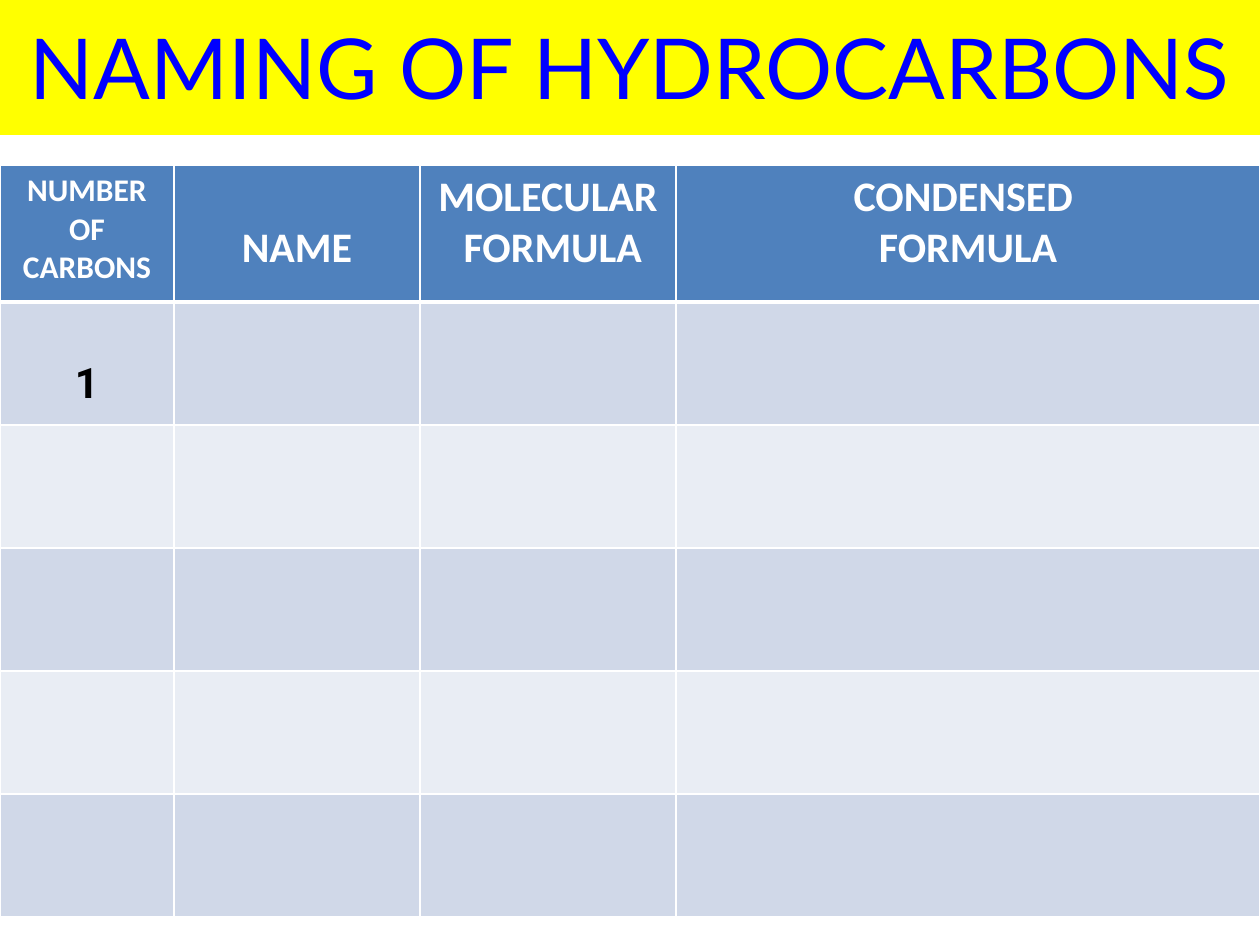
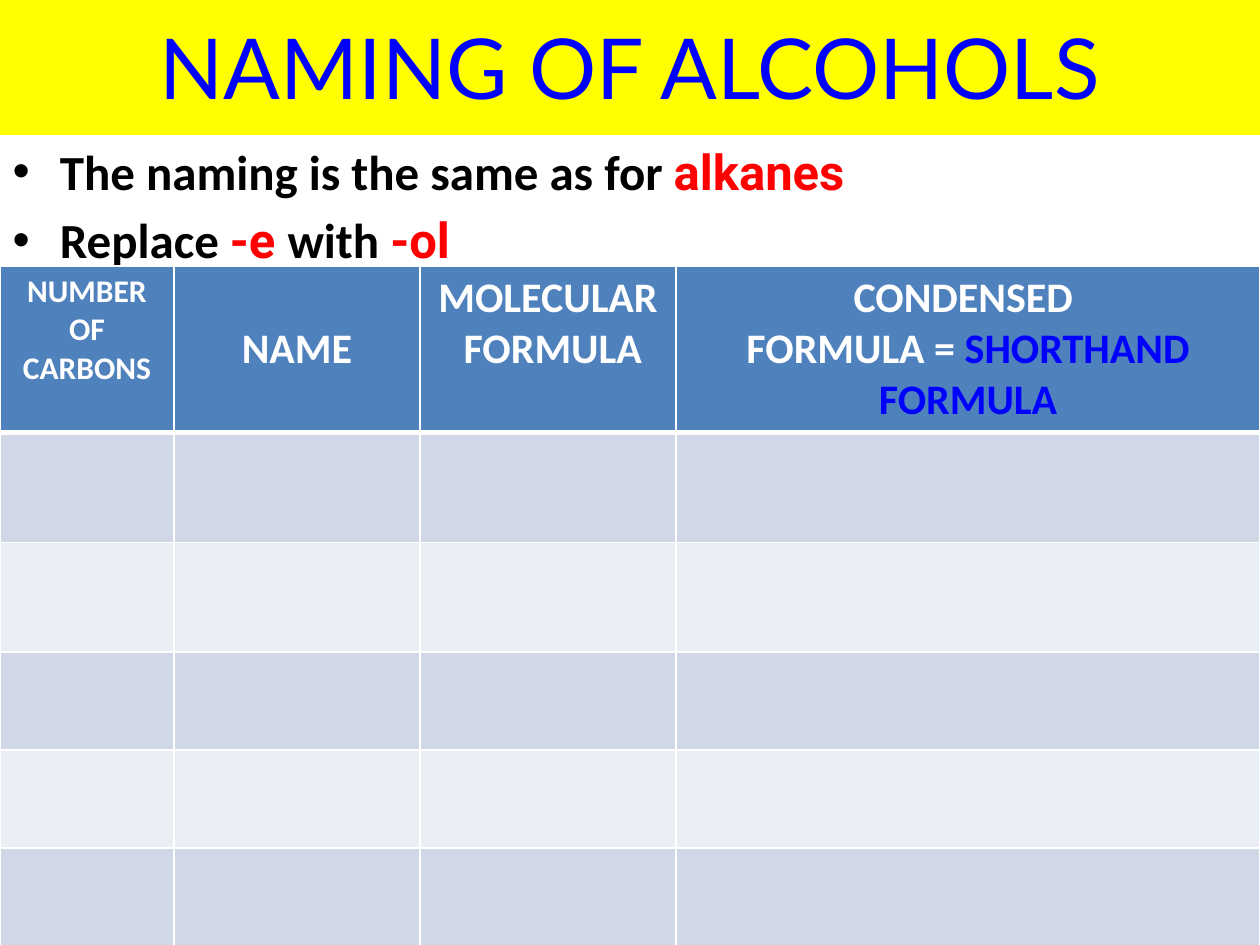
from pptx import Presentation, util as u
from pptx.dml.color import RGBColor
from pptx.enum import text as t
from pptx.oxml import parse_xml
from pptx.oxml.ns import nsdecls

Pt = u.Pt
WHITE, BLACK, BLUE, RED, YELLOW = "FFFFFF", "000000", "0000FF", "FF0000", "FFFF00"
HEADER_FILL, BANDS = "4F81BD", ("D0D8E8", "E9EDF4")
COLUMN_WIDTHS = (99.4, 140.6, 146.3, 333.7)
LINE_GAP = 32.9


def rgb(code):
    return RGBColor.from_string(code)


def write(paragraph, words, size=24, font="Calibri", color=WHITE, bold=True):
    run = paragraph.add_run()
    run.text = words
    run.font.size, run.font.name, run.font.bold = Pt(size), font, bold
    run.font.color.rgb = rgb(color)


class NamingDeck:
    """Builds slides with a title band and a naming table in one shared style."""

    def __init__(self):
        self.deck = Presentation()
        self.deck.slide_width, self.deck.slide_height = Pt(720), Pt(540)
        self.slide = None

    def start(self, title, layout):
        self.slide = self.deck.slides.add_slide(self.deck.slide_layouts[layout])
        band = self.slide.shapes.title
        self.place(band, 0, -1.4, 720, 78.5)
        band.fill.solid()
        band.fill.fore_color.rgb = rgb(YELLOW)
        frame = band.text_frame
        frame.vertical_anchor = t.MSO_ANCHOR.MIDDLE
        frame.paragraphs[0].alignment = t.PP_ALIGN.CENTER
        write(frame.paragraphs[0], title, size=48, font="Lato", color=BLUE, bold=False)

    def place(self, holder, left, top, width, height):
        holder.left, holder.top = Pt(left), Pt(top)
        holder.width, holder.height = Pt(width), Pt(height)
        holder.text_frame.auto_size = t.MSO_AUTO_SIZE.NONE
        holder.text_frame.word_wrap = True

    def rules(self, points):
        body = self.slide.placeholders[1]
        self.place(body, 0, 77, 716, 73.4)
        self.fill_lines(body.text_frame, points, None, size=28, color=BLACK)

    def fill_lines(self, frame, lines, alignment, **style):
        for index, line in enumerate(lines):
            paragraph = frame.add_paragraph() if index else frame.paragraphs[0]
            paragraph.alignment = alignment
            for words, changes in line:
                write(paragraph, words, **{**style, **changes})

    def table(self, top, heights, headings, first_number=None):
        table = self.slide.shapes.add_table(
            len(heights), len(COLUMN_WIDTHS), 0, Pt(top), Pt(720), Pt(sum(heights))).table
        for column, width in zip(table.columns, COLUMN_WIDTHS):
            column.width = Pt(width)
        for index, (row, height) in enumerate(zip(table.rows, heights)):
            row.height = Pt(height)
            for cell in row.cells:
                cell.fill.solid()
                cell.fill.fore_color.rgb = rgb(BANDS[(index - 1) % 2] if index else HEADER_FILL)
                self.borders(cell, top=3 if index == 1 else 1, bottom=1 if index else 3)
        for cell, lines in zip(table.rows[0].cells, headings):
            self.fill_lines(cell.text_frame, lines, t.PP_ALIGN.CENTER)
        table.cell(0, 1).margin_top = Pt(LINE_GAP)
        if first_number:
            cell = table.cell(1, 0)
            cell.margin_top = Pt(LINE_GAP)
            self.fill_lines(cell.text_frame, [[(first_number, {})]], t.PP_ALIGN.CENTER,
                            font="Roboto", color=BLACK)

    def borders(self, cell, top, bottom):
        properties = cell._tc.get_or_add_tcPr()
        for index, (side, width) in enumerate(zip("LRTB", (1, 1, top, bottom))):
            properties.insert(index, parse_xml(
                f'<a:ln{side} {nsdecls("a")} w="{Pt(width)}"><a:solidFill>'
                f'<a:srgbClr val="{WHITE}"/></a:solidFill></a:ln{side}>'))


def headings(*condensed_formula):
    return [
        [[("NUMBER OF CARBONS", {"size": 18})]],
        [[("NAME", {})]],
        [[("MOLECULAR", {})], [(" FORMULA", {})]],
        [[("CONDENSED ", {})], condensed_formula],
    ]


def main():
    naming = NamingDeck()
    naming.start("NAMING OF HYDROCARBONS", layout=5)
    naming.table(94.5, [78] + [70.3] * 5, headings(("FORMULA", {})), first_number="1")

    naming.start("NAMING OF ALCOHOLS", layout=1)
    key = {"font": "Roboto", "color": RED}
    naming.rules([
        [("The naming is the same as for ", {}), ("alkanes", key)],
        [("Replace ", {}), ("-e ", key), ("with ", {}), ("-ol", key)],
    ])
    naming.table(152, [94.5] + [62.8] * 2 + [56] * 3,
                 headings(("FORMULA = ", {}), ("SHORTHAND FORMULA", {"color": BLUE})))
    naming.deck.save("out.pptx")


if __name__ == "__main__":
    main()
